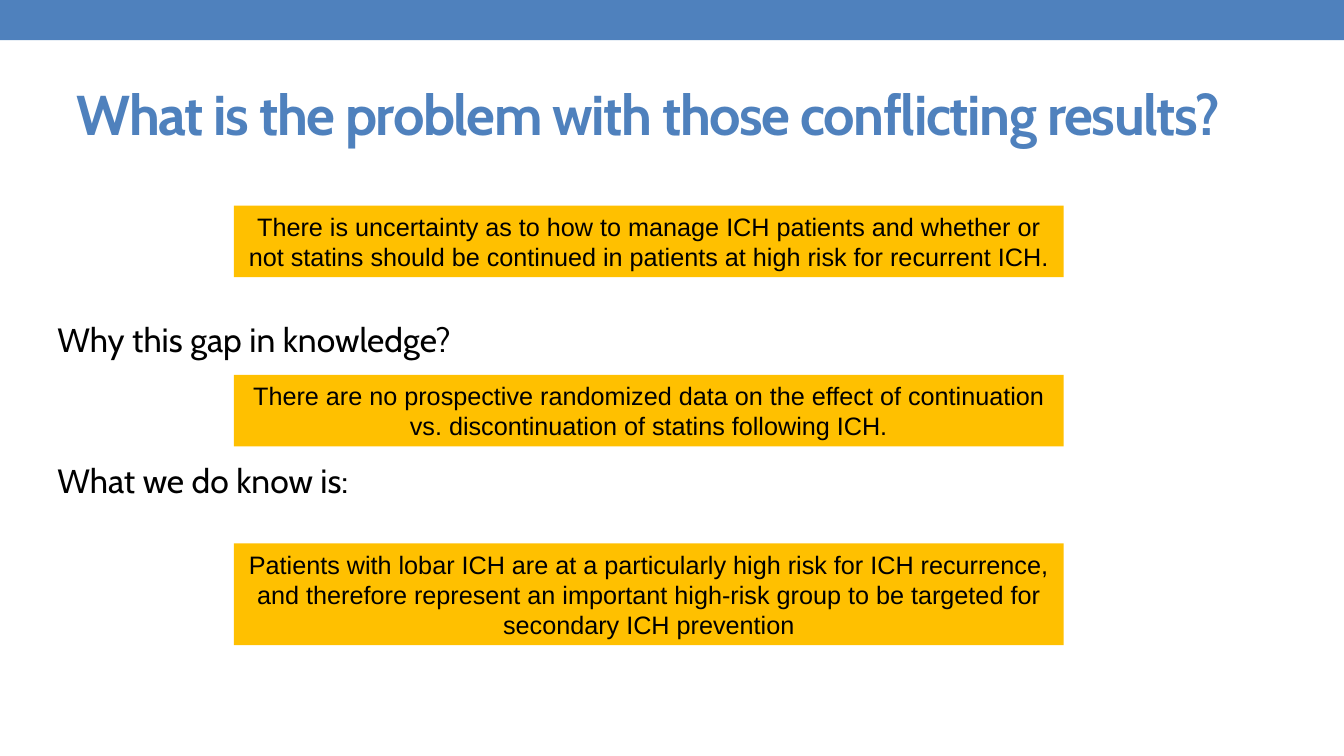
"""Build the slide on conflicting statin results and the gap in knowledge."""
from pptx import Presentation
from pptx.dml.color import RGBColor
from pptx.enum.shapes import MSO_SHAPE as Shape
from pptx.enum.text import MSO_ANCHOR as Anchor, PP_ALIGN as Align
from pptx.util import Inches, Pt

BLUE = RGBColor(0x4F, 0x81, 0xBD)
GOLD = RGBColor(0xFF, 0xC0, 0x00)
BLACK = RGBColor(0x00, 0x00, 0x00)

deck = Presentation()
deck.slide_width, deck.slide_height = Inches(13.33), Inches(7.5)
slide = deck.slides.add_slide(deck.slide_layouts[5])
shapes = slide.shapes


def write(shape, text, size=24, face="Cabin", color=BLACK, bold=False,
          align=Align.LEFT, track=0):
    frame = shape.text_frame
    frame.word_wrap = True
    frame.vertical_anchor = Anchor.MIDDLE
    par = frame.paragraphs[0]
    par.alignment = align
    run = par.add_run()
    run.text = text
    font = run.font
    font.size, font.name, font.bold = Pt(size), face, bold
    font.color.rgb = color
    if track:
        run._r.get_or_add_rPr().set("spc", str(track * 100))


def block(left, top, width, height, fill):
    box = shapes.add_shape(Shape.RECTANGLE, Inches(left), Inches(top),
                           Inches(width), Inches(height))
    box.shadow.inherit = False
    box.fill.solid()
    box.fill.fore_color.rgb = fill
    box.line.fill.background()
    return box


block(0, 0, 13.33, 0.4, BLUE)

title = shapes.title
title.left, title.top = Inches(0.66), Inches(0.58)
title.width, title.height = Inches(12), Inches(1.08)
write(title, "What is the problem with those conflicting results?",
      size=40, color=BLUE, bold=True, track=-1)

for top, text in [(3.11, "Why this gap in knowledge?"),
                  (4.51, "What we do know is:")]:
    head = shapes.add_textbox(Inches(0.47), Inches(top), Inches(12), Inches(0.5))
    write(head, text)

facts = [
    (2.04, 0.71, "There is uncertainty as to how to manage ICH patients and "
     "whether or not statins should be continued in patients at high risk "
     "for recurrent ICH."),
    (3.72, 0.71, "There are no prospective randomized data on the effect of "
     "continuation vs. discontinuation of statins following ICH."),
    (5.39, 1.01, "Patients with lobar ICH are at a particularly high risk for "
     "ICH recurrence, and therefore represent an important high-risk group "
     "to be targeted for secondary ICH prevention"),
]
for top, height, text in facts:
    write(block(2.32, top, 8.23, height, GOLD), text,
          size=18, face="Arial", align=Align.CENTER)

deck.save("out.pptx")
